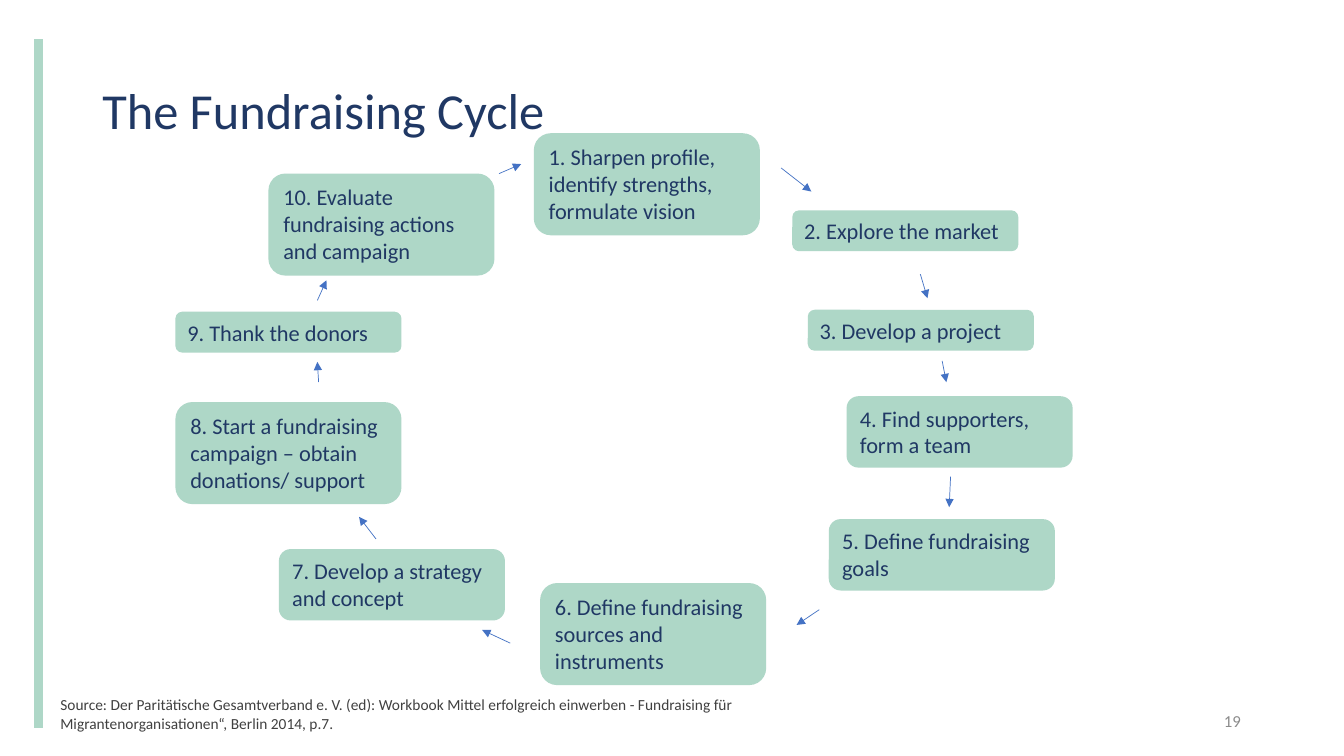
from lxml import etree
from pptx import Presentation
from pptx.dml.color import RGBColor
from pptx.enum.shapes import MSO_CONNECTOR as Connector, MSO_SHAPE as Shape
from pptx.enum.text import MSO_ANCHOR as Anchor, MSO_AUTO_SIZE as AutoSize, PP_ALIGN as Align
from pptx.oxml.ns import qn
from pptx.util import Pt

MINT = RGBColor(0xAE, 0xD7, 0xC7)
NAVY = RGBColor(0x20, 0x38, 0x64)
BLUE = RGBColor(0x44, 0x72, 0xC4)
DARK_GRAY = RGBColor(0x40, 0x40, 0x40)
LIGHT_GRAY = RGBColor(0x8C, 0x8C, 0x8C)

STEP_WIDTH = 161.5
STEP_HEIGHTS = {1: 29.2, 2: 51, 3: 72.9}  # by number of text lines

# left, top, text lines, wording
STEPS = [
    (381.3, 95.2, 3, "Sharpen profile, identify strengths, formulate vision"),
    (565.9, 150.3, 1, "Explore the market"),
    (577, 221.3, 1, "Develop a project"),
    (604.7, 283, 2, "Find supporters, form a team"),
    (592, 370.8, 2, "Define fundraising goals"),
    (385.8, 416.5, 3, "Define fundraising sources and instruments"),
    (199.2, 392.2, 2, "Develop a strategy and concept"),
    (125.3, 287.2, 3, "Start a fundraising campaign – obtain donations/ support"),
    (125.3, 222.7, 1, "Thank the donors"),
    (191.7, 124, 3, "Evaluate fundraising actions and campaign"),
]

# start x, start y, end x, end y
ARROWS = [
    (558, 120, 579.5, 136.8),
    (657.4, 195.8, 662.5, 213),
    (673, 257.8, 676, 273),
    (679, 340.5, 678, 362.3),
    (585.2, 435.5, 569, 446.4),
    (364.5, 459.4, 344.4, 450),
    (268.6, 385, 256.5, 369.2),
    (227.6, 273, 226.7, 258.5),
    (226.7, 214.6, 233.2, 200.2),
    (356.5, 124, 372.3, 117.2),
]


def write(shape, text, size, color, anchor=Anchor.TOP, align=Align.LEFT):
    frame = shape.text_frame
    frame.word_wrap = True
    frame.vertical_anchor = anchor
    paragraph = frame.paragraphs[0]
    paragraph.alignment = align
    run = paragraph.add_run()
    run.text = text
    run.font.name = "Calibri"
    run.font.size = Pt(size)
    run.font.color.rgb = color
    return paragraph


def add_text(slide, box, text, size, color, **layout):
    shape = slide.shapes.add_textbox(*map(Pt, box))
    return write(shape, text, size, color, **layout)


def add_step(slide, number, left, top, lines, wording):
    box = (left, top, STEP_WIDTH, STEP_HEIGHTS[lines])
    shape = slide.shapes.add_shape(Shape.ROUNDED_RECTANGLE, *map(Pt, box))
    shape.shadow.inherit = False
    shape.fill.solid()
    shape.fill.fore_color.rgb = MINT
    shape.line.fill.background()
    write(shape, f"{number}. {wording}", 16, NAVY)
    shape.text_frame.auto_size = AutoSize.SHAPE_TO_FIT_TEXT


def add_line(slide, ends, color, width):
    line = slide.shapes.add_connector(Connector.STRAIGHT, *map(Pt, ends))
    line.line.color.rgb = color
    line.line.width = Pt(width)
    etree.SubElement(line._element.spPr, qn("a:effectLst"))
    return line


def add_arrow(slide, ends):
    arrow = add_line(slide, ends, BLUE, 0.5)
    etree.SubElement(arrow.line._get_or_add_ln(), qn("a:tailEnd"), type="triangle")


def main():
    presentation = Presentation()
    presentation.slide_width = Pt(960)
    presentation.slide_height = Pt(540)
    slide = presentation.slides.add_slide(presentation.slide_layouts[6])

    add_line(slide, (27.5, 28, 27.5, 520), MINT, 6)
    title = add_text(slide, (66, 28.8, 828, 104.4), "The Fundraising Cycle",
                     36, NAVY, anchor=Anchor.MIDDLE)
    title.line_spacing = 0.9
    add_text(slide, (843, 500.4, 50.4, 28.8), "19", 12, LIGHT_GRAY,
             anchor=Anchor.MIDDLE, align=Align.RIGHT)

    for number, step in enumerate(STEPS, start=1):
        add_step(slide, number, *step)
    for ends in ARROWS:
        add_arrow(slide, ends)

    add_text(slide, (36, 493.2, 557.3, 33.8),
             "Source: Der Paritätische Gesamtverband e. V. (ed): Workbook Mittel "
             "erfolgreich einwerben - Fundraising für Migrantenorganisationen“, "
             "Berlin 2014, p.7.", 11, DARK_GRAY)
    presentation.save("out.pptx")


if __name__ == "__main__":
    main()
